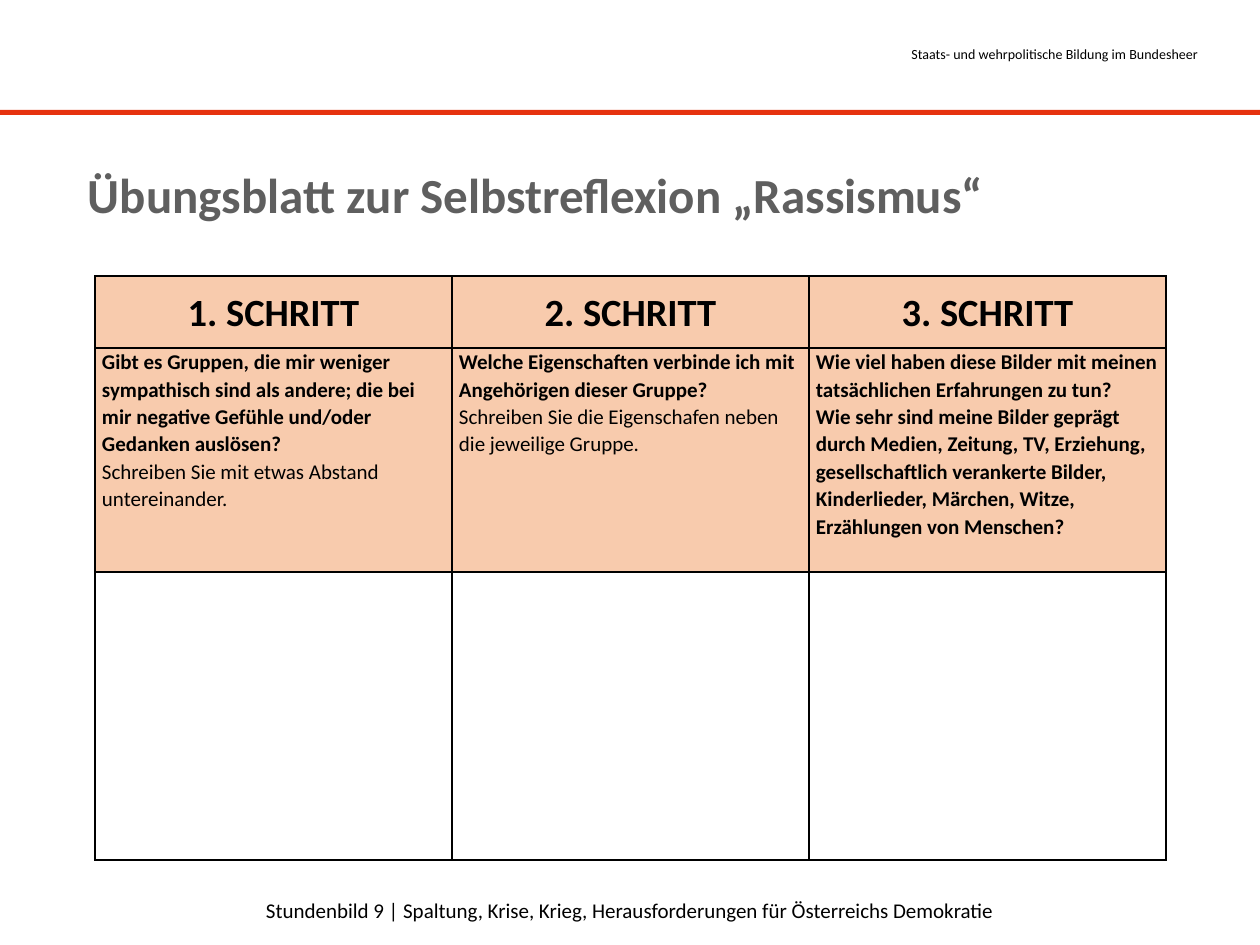
from lxml.etree import SubElement
from pptx import Presentation
from pptx.dml.color import RGBColor
from pptx.enum.shapes import MSO_SHAPE
from pptx.enum.text import MSO_ANCHOR, PP_ALIGN
from pptx.oxml.ns import qn
from pptx.util import Pt

EMU_PER_PX = 914400 / 126
FONT = "Calibri"
BLACK, GREY, RED, PEACH = "000000", "5F5F5F", "E6320F", "F8CBAD"
COLUMN_WIDTH = 357
ROW_HEIGHTS = [72, 224, 288]
STEPS = [
    ("1. SCHRITT", [
        ("Gibt es Gruppen, die mir weniger sympathisch sind als andere; die bei mir "
         "negative Gefühle und/oder Gedanken auslösen?", True),
        ("Schreiben Sie mit etwas Abstand untereinander.", False),
    ]),
    ("2. SCHRITT", [
        ("Welche Eigenschaften verbinde ich mit Angehörigen dieser Gruppe?", True),
        ("Schreiben Sie die Eigenschafen neben die jeweilige Gruppe.", False),
    ]),
    ("3. SCHRITT", [
        ("Wie viel haben diese Bilder mit meinen tatsächlichen Erfahrungen zu tun?", True),
        ("Wie sehr sind meine Bilder geprägt durch Medien, Zeitung, TV, Erziehung, "
         "gesellschaftlich verankerte Bilder, Kinderlieder, Märchen, Witze, "
         "Erzählungen von Menschen?", True),
    ]),
]


def px(length):
    """Turn pixels into EMU."""
    return round(length * EMU_PER_PX)


def color(hex_code):
    """Turn a hex string into a colour."""
    return RGBColor.from_string(hex_code)


def write(paragraph, text, size, bold=False, hue=BLACK, align=PP_ALIGN.LEFT, spacing=1.0):
    """Fill a paragraph with text in one format."""
    paragraph.text = text
    paragraph.alignment = align
    paragraph.line_spacing = spacing
    for run in paragraph.runs:
        run.font.name = FONT
        run.font.size = Pt(size)
        run.font.bold = bold
        run.font.color.rgb = color(hue)


def add_line_of_text(slide, box, text, size, inset=True, **style):
    """Add a text box holding one paragraph."""
    frame = slide.shapes.add_textbox(*map(px, box)).text_frame
    frame.word_wrap = True
    if not inset:
        frame.margin_left = frame.margin_right = 0
        frame.margin_top = frame.margin_bottom = 0
    write(frame.paragraphs[0], text, size, **style)


def add_rule(slide, box):
    """Add the red bar below the header."""
    bar = slide.shapes.add_shape(MSO_SHAPE.RECTANGLE, *map(px, box))
    bar.shadow.inherit = False
    bar.fill.solid()
    bar.fill.fore_color.rgb = color(RED)
    bar.line.fill.background()


def draw_borders(cell):
    """Put a black line on all four sides of a cell."""
    properties = cell._tc.get_or_add_tcPr()
    for side in ("a:lnL", "a:lnR", "a:lnT", "a:lnB"):
        border = SubElement(properties, qn(side), w=str(Pt(1)))
        fill = SubElement(border, qn("a:solidFill"))
        SubElement(fill, qn("a:srgbClr"), val=BLACK)


def fill_cell(cell, lines, size, align=PP_ALIGN.LEFT, anchor=MSO_ANCHOR.TOP):
    """Write lines of text into a peach cell."""
    cell.margin_left = cell.margin_right = px(7)
    cell.margin_top = cell.margin_bottom = 0
    cell.vertical_anchor = anchor
    cell.fill.solid()
    cell.fill.fore_color.rgb = color(PEACH)
    frame = cell.text_frame
    for index, (text, bold) in enumerate(lines):
        paragraph = frame.add_paragraph() if index else frame.paragraphs[0]
        write(paragraph, text, size, bold, align=align, spacing=1.07)


def add_worksheet(slide, left, top):
    """Add the table with one column for each step."""
    table = slide.shapes.add_table(
        len(ROW_HEIGHTS), len(STEPS), px(left), px(top),
        px(COLUMN_WIDTH * len(STEPS)), px(sum(ROW_HEIGHTS))).table
    table.first_row = table.horz_banding = False
    for row, height in zip(table.rows, ROW_HEIGHTS):
        row.height = px(height)
    for cell in table.iter_cells():
        draw_borders(cell)
    for index, (heading, questions) in enumerate(STEPS):
        table.columns[index].width = px(COLUMN_WIDTH)
        fill_cell(table.cell(0, index), [(heading, True)], 22,
                  PP_ALIGN.CENTER, MSO_ANCHOR.MIDDLE)
        fill_cell(table.cell(1, index), questions, 12)
        table.cell(2, index).fill.background()


def main():
    """Build the worksheet slide."""
    deck = Presentation()
    deck.slide_width, deck.slide_height = px(1260), px(945)
    slide = deck.slides.add_slide(deck.slide_layouts[6])
    add_line_of_text(
        slide, (199, 891, 862, 38),
        "Stundenbild 9 | Spaltung, Krise, Krieg, Herausforderungen für Österreichs Demokratie",
        12, align=PP_ALIGN.CENTER)
    add_line_of_text(slide, (695, 39, 516, 30),
                     "Staats- und wehrpolitische Bildung im Bundesheer",
                     8, align=PP_ALIGN.RIGHT)
    add_rule(slide, (0, 110, 1260, 5))
    add_worksheet(slide, 95, 276)
    add_line_of_text(slide, (88, 171, 1068, 76),
                     "Übungsblatt zur Selbstreflexion „Rassismus“",
                     28, inset=False, bold=True, hue=GREY, spacing=0.9)
    deck.save("out.pptx")


if __name__ == "__main__":
    main()
